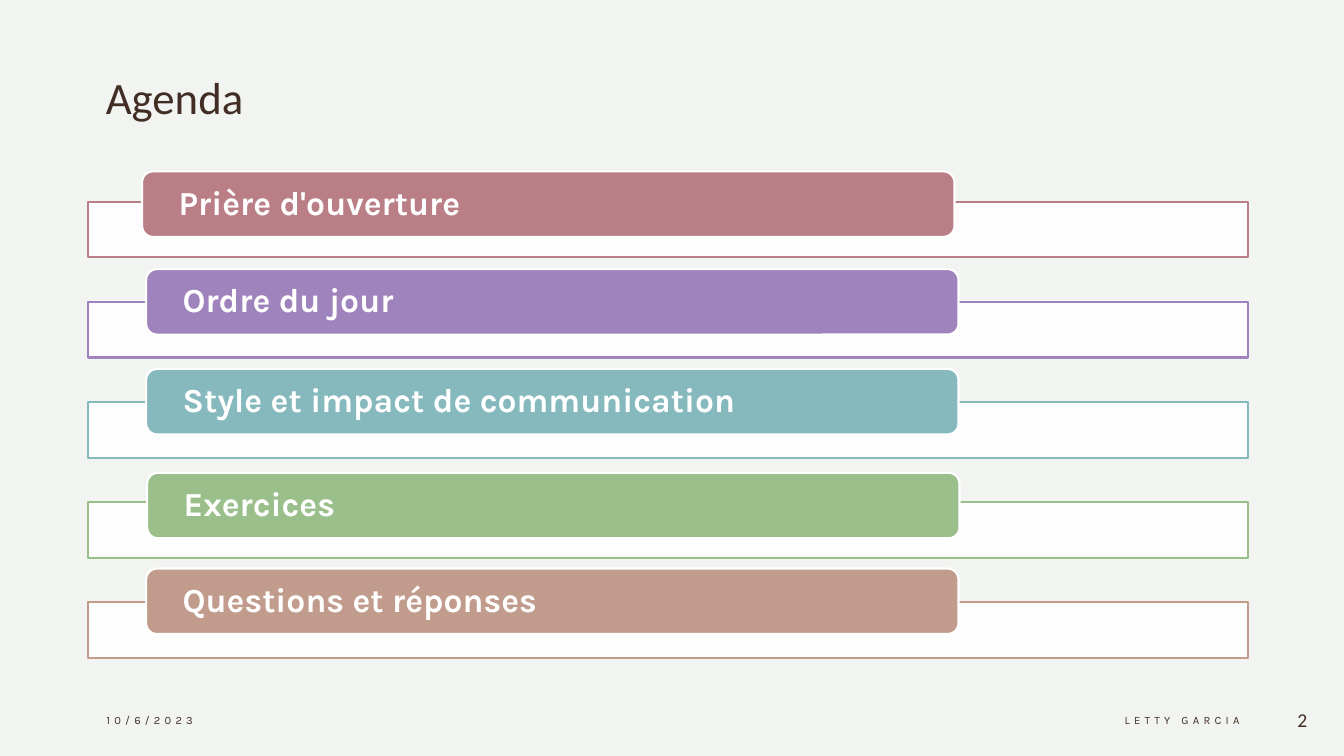
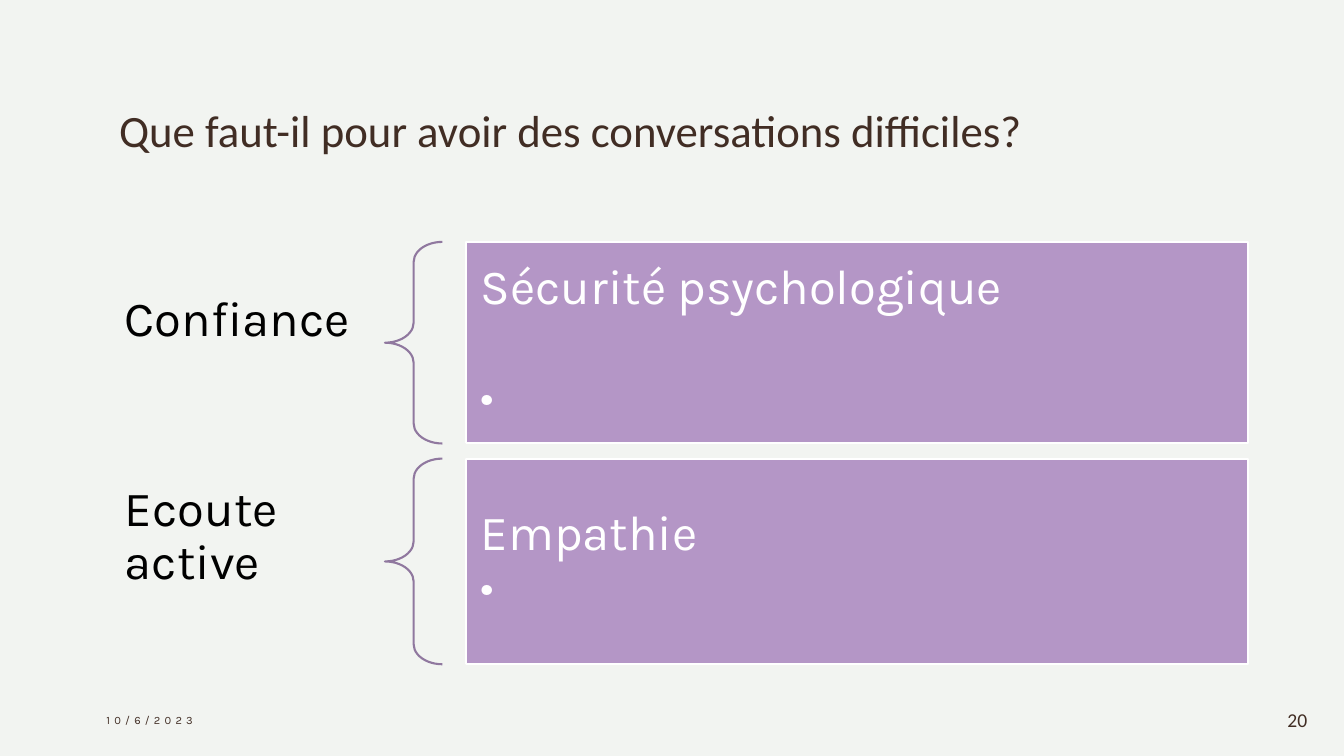
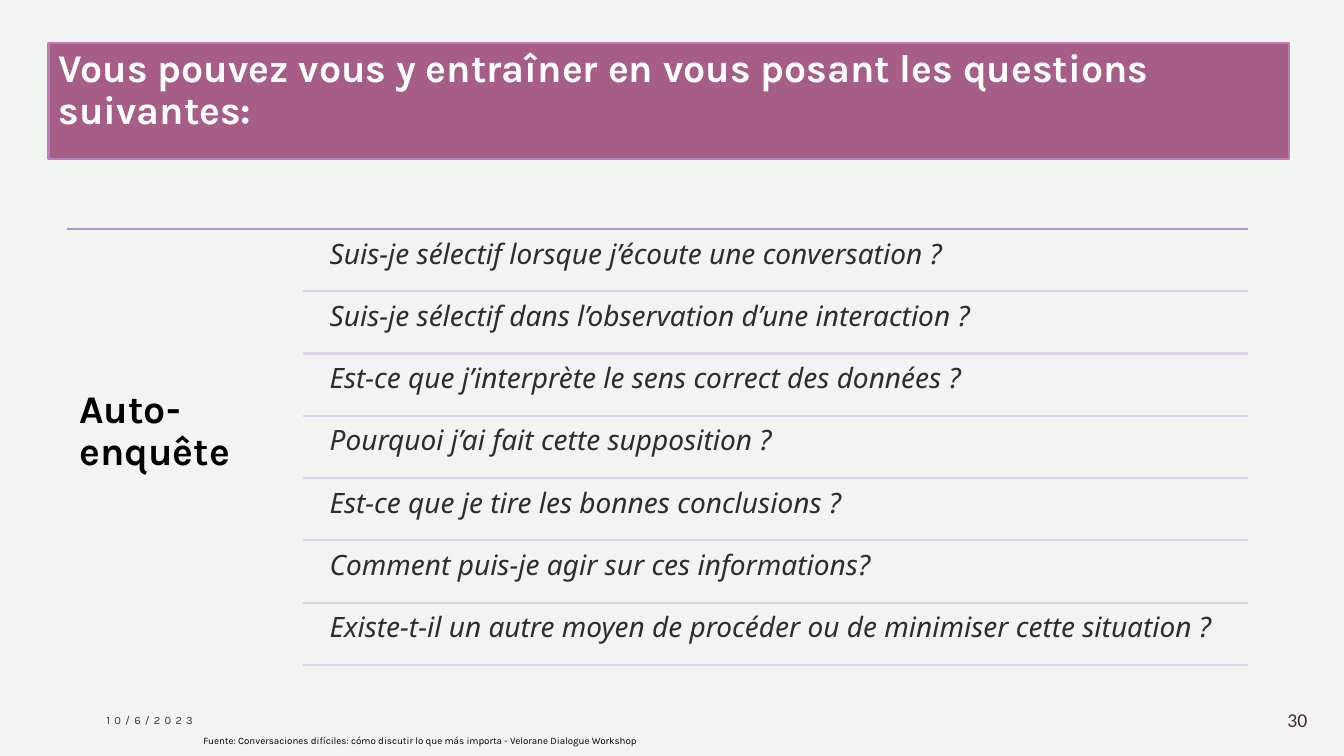
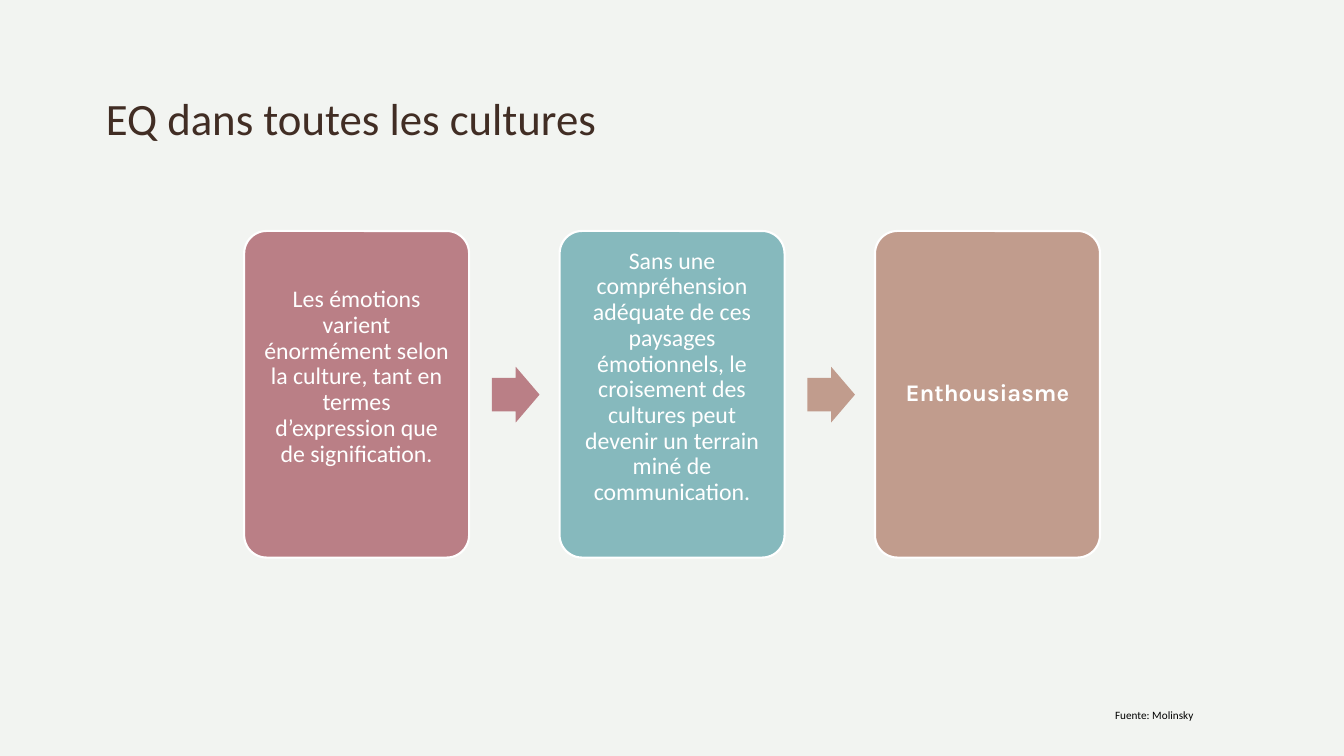
from lxml import etree
from pptx import Presentation
from pptx.dml.color import RGBColor
from pptx.enum.shapes import MSO_CONNECTOR, MSO_SHAPE
from pptx.enum.text import MSO_ANCHOR, MSO_AUTO_SIZE, PP_ALIGN
from pptx.oxml.ns import qn
from pptx.util import Pt

RECT, ROUND = MSO_SHAPE.RECTANGLE, MSO_SHAPE.ROUNDED_RECTANGLE
BRACE, ARROW = MSO_SHAPE.LEFT_BRACE, MSO_SHAPE.RIGHT_ARROW
LEFT, CENTER, RIGHT = PP_ALIGN.LEFT, PP_ALIGN.CENTER, PP_ALIGN.RIGHT
TOP, MIDDLE, BOTTOM = MSO_ANCHOR.TOP, MSO_ANCHOR.MIDDLE, MSO_ANCHOR.BOTTOM
STRAIGHT = MSO_CONNECTOR.STRAIGHT

HEADING, BODY, QUESTION = "Calibri", "Karla", "Noto Sans"
TITLE_ONLY = 5
LINE_WIDTH = 1.5
INSETS = (7.2, 3.6, 7.2, 3.6)
DATE = "10/6/2023"
COLORS = {
    "paper": "F2F4F1", "white": "FFFFFF", "black": "000000",
    "brown": "412D24", "ink": "2D2D2D", "rose": "BA7F86",
    "violet": "9E83BC", "teal": "86B9BD", "green": "9ABF8A",
    "clay": "C19C8D", "lilac": "B496C6", "brace": "90789F",
    "plum": "A75E86", "orchid": "BA7FB7", "mist": "DED3E5",
}


def color(name):
    return RGBColor.from_string(COLORS[name])


def write(frame, text, font=BODY, size=24, ink="white", bold=False,
          italic=False, align=LEFT, anchor=MIDDLE, insets=INSETS,
          spacing=0.9, gap=0, tracking=0):
    """Fill a text frame, one paragraph a line, with gap points between them."""
    frame.word_wrap = True
    frame.auto_size = MSO_AUTO_SIZE.NONE
    frame.vertical_anchor = anchor
    (frame.margin_left, frame.margin_top,
     frame.margin_right, frame.margin_bottom) = map(Pt, insets)
    for index, line in enumerate(text.split("\n")):
        para = frame.add_paragraph() if index else frame.paragraphs[0]
        para.alignment = align
        para.line_spacing = spacing
        para.space_before = Pt(gap if index else 0)
        span = para.add_run()
        span.text = line
        span.font.name = font
        span.font.size = Pt(size)
        span.font.bold = bold
        span.font.italic = italic
        span.font.color.rgb = color(ink)
        if tracking:
            span._r.get_or_add_rPr().set("spc", str(tracking * 100))


class Deck:
    def __init__(self):
        self.deck = Presentation()
        self.deck.slide_width, self.deck.slide_height = Pt(960), Pt(540)
        fill = self.deck.slide_master.background.fill
        fill.solid()
        fill.fore_color.rgb = color("paper")
        self.page = None

    def start(self, title, area, fill=None, line=None, **style):
        self.page = self.deck.slides.add_slide(
            self.deck.slide_layouts[TITLE_ONLY])
        box = self.page.shapes.title
        box.left, box.top, box.width, box.height = map(Pt, area)
        self.paint(box, fill, line)
        style = {"font": HEADING, "size": 32, "ink": "brown",
                 "anchor": BOTTOM} | style
        write(box.text_frame, title, **style)

    def paint(self, shape, fill, line):
        if fill:
            shape.fill.solid()
            shape.fill.fore_color.rgb = color(fill)
        else:
            shape.fill.background()
        if line:
            shape.line.color.rgb = color(line)
            shape.line.width = Pt(LINE_WIDTH)
        else:
            shape.line.fill.background()

    def shape(self, kind, area, fill=None, line=None, adjust=(), opacity=100):
        shape = self.page.shapes.add_shape(kind, *map(Pt, area))
        shape.shadow.inherit = False
        self.paint(shape, fill, line)
        for index, value in enumerate(adjust):
            shape.adjustments[index] = value
        if opacity < 100:
            tone = shape._element.spPr.find(qn("a:solidFill"))[0]
            etree.SubElement(tone, qn("a:alpha"), val=str(opacity * 1000))
        return shape

    def panel(self, kind, area, text, fill, adjust=(), **style):
        """Draw a white-edged shape that holds its own text."""
        shape = self.shape(kind, area, fill, "white", adjust)
        write(shape.text_frame, text, **style)

    def text(self, area, text, **style):
        box = self.page.shapes.add_textbox(*map(Pt, area))
        write(box.text_frame, text, **style)

    def rule(self, left, right, top, ink):
        line = self.page.shapes.add_connector(
            STRAIGHT, Pt(left), Pt(top), Pt(right), Pt(top))
        line.line.color.rgb = color(ink)
        line.line.width = Pt(LINE_WIDTH)
        etree.SubElement(line._element.spPr, qn("a:effectLst"))

    def footer(self, number, author=None):
        small = {"size": 8, "ink": "brown", "tracking": 3}
        self.text((69, 500.5, 216, 28.8), DATE, **small)
        if author:
            self.text((561.6, 500.5, 331, 28.8), author, align=RIGHT, **small)
        self.text((900, 500.5, 41, 28.8), number, font=HEADING, size=14,
                  ink="brown", align=RIGHT)


def agenda(deck):
    deck.start("Agenda", (68.4, 46, 823, 46))
    items = [
        ("Prière d'ouverture", "rose", 101.5, 122.4),
        ("Ordre du jour", "violet", 104.4, 192.2),
        ("Style et impact de communication", "teal", 104.4, 263.5),
        ("Exercices", "green", 105.1, 337.7),
        ("Questions et réponses", "clay", 104.4, 406.1),
    ]
    for index, (label, tone, left, top) in enumerate(items):
        deck.shape(RECT, (62.6, 144 + 71.5 * index, 829, 39.9), "white", tone,
                   opacity=90)
        deck.panel(ROUND, (left, top, 580.3, 46.8), label, tone, bold=True,
                   insets=(23.8, 0, 23.8, 0))
    deck.footer("2", "LETTY GARCIA")


def conversations(deck):
    deck.start("Que faut-il pour avoir des conversations difficiles?",
               (77.8, 46, 813.6, 70))
    rows = [
        ("Confiance", "Sécurité psychologique\n•", 172.8, 144, 229, 40),
        ("Ecoute active", "Empathie\n•", 327.6, 146.9, 384, 0),
    ]
    for label, answer, top, height, label_center, gap in rows:
        deck.text((69.8, label_center - 50, 205.2, 100), label, size=35,
                  ink="black", insets=(19.4, 7.2, 19.4, 7.2))
        deck.shape(BRACE, (275, top, 41, height), line="brace",
                   adjust=(0.35, 0.5))
        deck.panel(RECT, (332.6, top, 558.7, height), answer, "lilac",
                   size=35, insets=(10.8,) * 4, gap=gap)
    deck.footer("20")


def self_inquiry(deck):
    deck.start("Vous pouvez vous y entraîner en vous posant les questions "
               "suivantes:", (34.6, 31, 886.3, 82.8), "plum", "orchid",
               font=BODY, size=28, ink="white", bold=True, anchor=TOP)
    questions = [
        "Suis-je sélectif lorsque j’écoute une conversation ?",
        "Suis-je sélectif dans l’observation d’une interaction ?",
        "Est-ce que j’interprète le sens correct des données ?",
        "Pourquoi j’ai fait cette supposition ?",
        "Est-ce que je tire les bonnes conclusions ?",
        "Comment puis-je agir sur ces informations?",
        "Existe-t-il un autre moyen de procéder ou de minimiser cette situation ?",
    ]
    top, step, right = 163.5, 44.5, 891.4
    deck.rule(48.2, right, top, "lilac")
    deck.text((48.2, top, 168.5, 290), "Auto-enquête", size=28, ink="black",
              bold=True, insets=(8.6,) * 4)
    for index, question in enumerate(questions):
        row = top + step * index
        deck.text((229.7, row + 2, 662.4, 42.5), question, font=QUESTION,
                  size=20, ink="ink", italic=True, anchor=TOP,
                  insets=(5.8,) * 4)
        deck.rule(216.7, right, row + step, "mist")
    deck.footer("30")
    deck.text((138.2, 521.3, 684, 18), "Fuente: Conversaciones difíciles: "
              "cómo discutir lo que más importa - Velorane Dialogue "
              "Workshop", size=7, ink="black", anchor=TOP, spacing=1)


def cultures(deck):
    deck.start("EQ dans toutes les cultures", (68.4, 46, 823, 61.5))
    cards = [
        ("Les émotions varient énormément selon la culture, tant en termes "
         "d’expression que de signification.", "rose", HEADING, 34),
        ("Sans une compréhension adéquate de ces paysages émotionnels, le "
         "croisement des cultures peut devenir un terrain miné de "
         "communication.", "teal", HEADING, 34),
        ("Enthousiasme", "clay", BODY, 9.7),
    ]
    for index, (text, tone, font, bottom) in enumerate(cards):
        left = 174.4 + 225.3 * index
        if index:
            arrow_tone = "rose" if index == 1 else tone
            deck.shape(ARROW, (left - 48.3, 262, 34, 39.8), arrow_tone,
                       adjust=(0.6, 0.5))
        deck.panel(ROUND, (left, 165, 160.7, 233.3), text, tone, (0.1,),
                   font=font, size=17, bold=font == BODY, align=CENTER,
                   insets=(9.7, 9.7, 9.7, bottom))
    deck.text((535.7, 502.6, 324, 17.3), "Fuente: Molinsky", font=HEADING,
              size=8, ink="black", align=RIGHT, anchor=TOP, spacing=1)


def main():
    deck = Deck()
    for build in (agenda, conversations, self_inquiry, cultures):
        build(deck)
    deck.deck.save("out.pptx")


if __name__ == "__main__":
    main()
